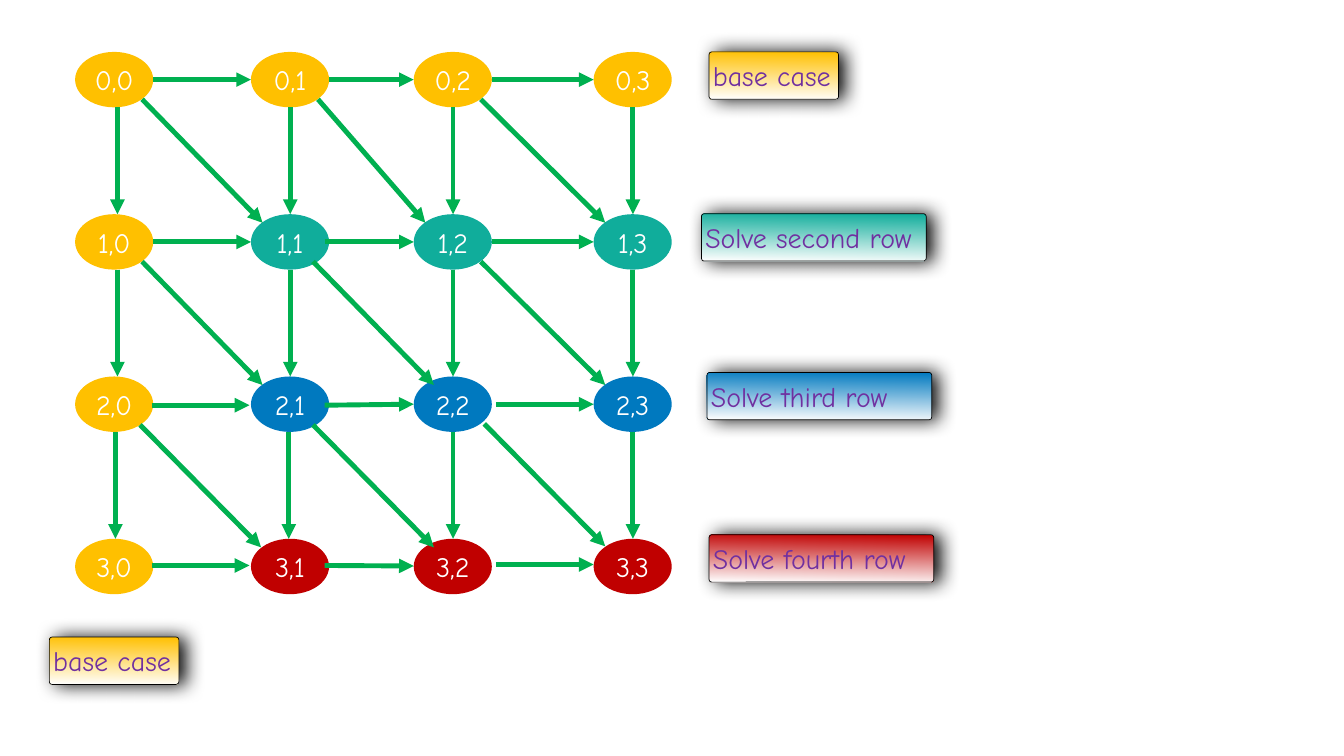
"""Build a slide of the row-by-row dependencies in a 4 by 4 dynamic programming table."""
from lxml.etree import SubElement
from pptx import Presentation
from pptx.dml.color import RGBColor
from pptx.enum.shapes import MSO_CONNECTOR as LINK, MSO_SHAPE as SHAPE
from pptx.enum.text import MSO_ANCHOR as ANCHOR, MSO_AUTO_SIZE as FIT, PP_ALIGN as ALIGN
from pptx.oxml.ns import qn
from pptx.util import Pt

PX = 9144
YELLOW, TEAL, BLUE, RED = "FFC000", "10AD9B", "0079BF", "C00000"
WHITE, BLACK, PURPLE, GREEN = "FFFFFF", "000000", "7030A0", "00B050"


def color(value):
    return RGBColor.from_string(value)


def add_labelled(kind, box, words, ink, align):
    shape = slide.shapes.add_shape(kind, *[length * PX for length in box])
    shape.shadow.inherit = False
    frame = shape.text_frame
    frame.word_wrap = True
    frame.vertical_anchor = ANCHOR.MIDDLE
    frame.margin_left = frame.margin_right = frame.margin_top = frame.margin_bottom = 6 * PX
    paragraph = frame.paragraphs[0]
    paragraph.alignment = align
    run = paragraph.add_run()
    run.text = words
    run.font.name = "Comic Neue"
    run.font.size = Pt(40)
    run.font.color.rgb = color(ink)
    return shape


deck = Presentation()
deck.slide_width, deck.slide_height = 2667 * PX, 1500 * PX
slide = deck.slides.add_slide(deck.slide_layouts[6])

legend = [
    (1407, 103, 257, "base case", YELLOW),
    (98, 1264, 257, "base case", YELLOW),
    (1392, 424, 446, "Solve second row", TEAL),
    (1403, 739, 446, "Solve third row", BLUE),
    (1407, 1061, 446, "Solve fourth row", RED),
]
for left, top, width, step, tint in legend:
    label = add_labelled(SHAPE.ROUNDED_RECTANGLE, (left, top, width, 94), step, PURPLE, ALIGN.LEFT)
    label.adjustments[0] = 0.06
    label.fill.gradient()
    label.fill.gradient_angle = 269
    for stop, shade in zip(label.fill.gradient_stops, (tint, WHITE)):
        stop.color.rgb = color(shade)
    label.line.color.rgb = color(BLACK)
    label.line.width = Pt(1)
    effects = label._element.spPr.find(qn("a:effectLst"))
    shadow = SubElement(effects, qn("a:outerShdw"), blurRad=str(Pt(28)), dist=str(Pt(9)),
                        dir="0", algn="ctr", rotWithShape="0")
    shadow_color = SubElement(shadow, qn("a:srgbClr"), val=BLACK)
    SubElement(shadow_color, qn("a:alpha"), val="97000")

columns = [149, 498, 821, 1178]
rows = [103 + 322 * row for row in range(4)]
row_colors = [YELLOW, TEAL, BLUE, RED]
for row, top in enumerate(rows):
    for column, left in enumerate(columns):
        cell = add_labelled(SHAPE.OVAL, (left, top, 155, 110), f"{row},{column}", WHITE, ALIGN.CENTER)
        cell.text_frame.auto_size = FIT.SHAPE_TO_FIT_TEXT
        cell.fill.solid()
        cell.fill.fore_color.rgb = color(row_colors[row] if column else YELLOW)
        cell.line.fill.background()

directions = {
    "right": (0, 1, (155, 55), (0, 55)),
    "diagonal": (1, 1, (133, 94), (23, 17)),
    "down": (1, 0, (78, 110), (78, 0)),
}
nudges = {
    ("right", 1, 1): (-9, 0, 0, 0),
    ("right", 2, 0): (-3, 2, -3, 2),
    ("right", 2, 1): (-9, 2, 0, 0),
    ("right", 2, 2): (8, 0, 0, 0),
    ("right", 3, 0): (-3, -2, -3, -2),
    ("right", 3, 1): (-9, -2, 0, -1),
    ("right", 3, 2): (8, -4, 0, -4),
    ("diagonal", 1, 1): (-10, 0, 17, 0),
    ("diagonal", 2, 0): (-4, 2, -3, 0),
    ("diagonal", 2, 1): (-10, 2, 17, 0),
    ("diagonal", 2, 2): (7, 0, 0, -2),
    ("down", 0, 0): (6, 0, 6, 0),
    ("down", 1, 0): (6, 0, 6, 0),
    ("down", 2, 0): (2, 1, 2, 0),
    ("down", 2, 1): (-3, 1, -3, 0),
}
for direction, (down, right, start, end) in directions.items():
    for row in range(4 - down):
        for column in range(4 - right):
            ends = (columns[column] + start[0], rows[row] + start[1],
                    columns[column + right] + end[0], rows[row + down] + end[1])
            nudge = nudges.get((direction, row, column), (0, 0, 0, 0))
            arrow = slide.shapes.add_connector(
                LINK.STRAIGHT, *[(place + shift) * PX for place, shift in zip(ends, nudge)])
            arrow.line.color.rgb = color(GREEN)
            arrow.line.width = Pt(7)
            SubElement(arrow.line._get_or_add_ln(), qn("a:tailEnd"), type="triangle")
            SubElement(arrow._element.spPr, qn("a:effectLst"))

deck.save("out.pptx")
